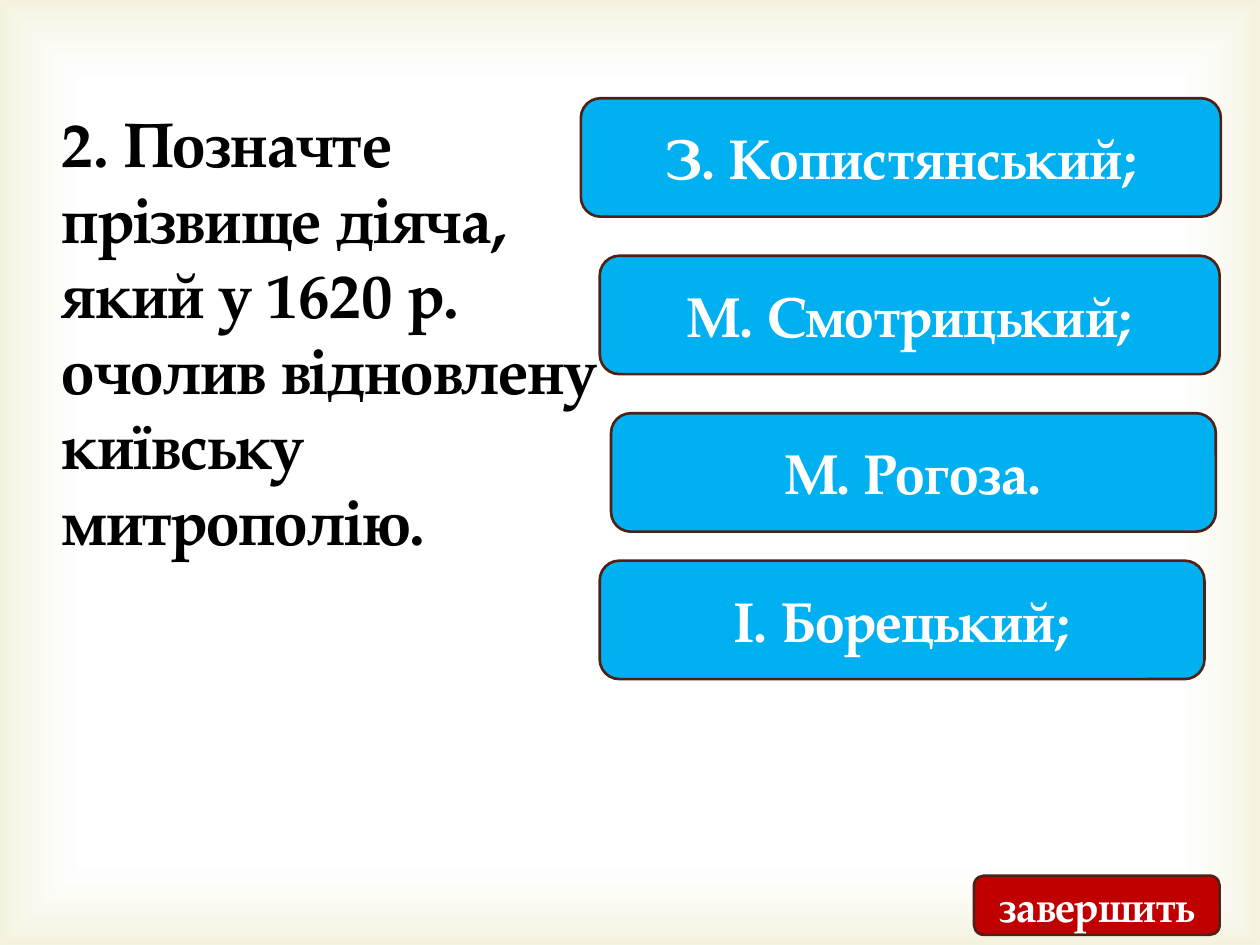
from lxml.etree import fromstring
from pptx import Presentation
from pptx.dml.color import RGBColor
from pptx.enum.shapes import MSO_SHAPE
from pptx.enum.text import MSO_ANCHOR, MSO_AUTO_SIZE, PP_ALIGN
from pptx.util import Inches, Pt

FONT = "TeX Gyre Pagella"
BLACK = RGBColor(0x00, 0x00, 0x00)
WHITE = RGBColor(0xFF, 0xFF, 0xFF)
BLUE = RGBColor(0x00, 0xB0, 0xF0)
RED = RGBColor(0xC0, 0x00, 0x00)
BROWN = RGBColor(0x4F, 0x20, 0x15)
GOLD = RGBColor(0xD1, 0xCA, 0x75)

QUESTION = ("2. Позначте прізвище діяча, який у 1620 р. "
            "очолив відновлену київську митрополію.")
ANSWERS = [
    ("З. Копистянський;", 4.61, 0.78, 5.08),
    ("М. Смотрицький;", 4.76, 2.03, 4.92),
    ("М. Рогоза.", 4.85, 3.28, 4.8),
    ("І. Борецький;", 4.76, 4.45, 4.8),
]


def set_text(tf, text, size, color, align, anchor):
    """Fill a text frame with one bold paragraph."""
    tf.word_wrap = True
    tf.vertical_anchor = anchor
    p = tf.paragraphs[0]
    p.text = text
    p.alignment = align
    p.font.name = FONT
    p.font.size = Pt(size)
    p.font.bold = True
    p.font.color.rgb = color


def add_backdrop(prs, s):
    """Put a rectangle with a soft golden edge behind everything."""
    sp = s.shapes.add_shape(MSO_SHAPE.RECTANGLE, 0, 0,
                            prs.slide_width, prs.slide_height)
    sp.shadow.inherit = False
    sp.line.fill.background()
    stops = "".join(
        f'<a:gs pos="{pos * 1000}"><a:srgbClr val="{color}">'
        f'<a:alpha val="{alpha * 1000}"/></a:srgbClr></a:gs>'
        for pos, color, alpha in [(83, WHITE, 11), (100, GOLD, 23)])
    grad = fromstring(
        '<a:gradFill xmlns:a="http://schemas.openxmlformats.org/drawingml/2006/main"'
        f' rotWithShape="1"><a:gsLst>{stops}</a:gsLst><a:path path="rect">'
        '<a:fillToRect l="50000" t="50000" r="50000" b="50000"/></a:path></a:gradFill>')
    sp.element.spPr.insert(2, grad)
    s.shapes.element.insert(2, sp.element)


def add_question(s):
    """Place the question in the title placeholder."""
    sp = s.shapes.title
    sp.left, sp.top = Inches(0.39), Inches(0.78)
    sp.width, sp.height = Inches(4.69), Inches(3.74)
    set_text(sp.text_frame, QUESTION, 36, BLACK, PP_ALIGN.LEFT, MSO_ANCHOR.TOP)
    sp.text_frame.auto_size = MSO_AUTO_SIZE.SHAPE_TO_FIT_TEXT


def add_button(s, text, left, top, width, height=0.94, fill=BLUE, size=32):
    """Add a rounded button with a centred label."""
    sp = s.shapes.add_shape(MSO_SHAPE.ROUNDED_RECTANGLE, Inches(left),
                            Inches(top), Inches(width), Inches(height))
    sp.shadow.inherit = False
    sp.fill.solid()
    sp.fill.fore_color.rgb = fill
    sp.line.color.rgb = BROWN
    sp.line.width = Pt(1.5)
    set_text(sp.text_frame, text, size, WHITE, PP_ALIGN.CENTER, MSO_ANCHOR.MIDDLE)


def main():
    """Build the quiz slide."""
    prs = Presentation()
    prs.slide_width, prs.slide_height = Inches(10), Inches(7.5)
    s = prs.slides.add_slide(prs.slide_layouts[5])
    add_backdrop(prs, s)
    add_question(s)
    for answer in ANSWERS:
        add_button(s, *answer)
    add_button(s, "завершить", 7.73, 6.95, 1.95, 0.47, RED, 24)
    prs.save("out.pptx")


if __name__ == "__main__":
    main()
